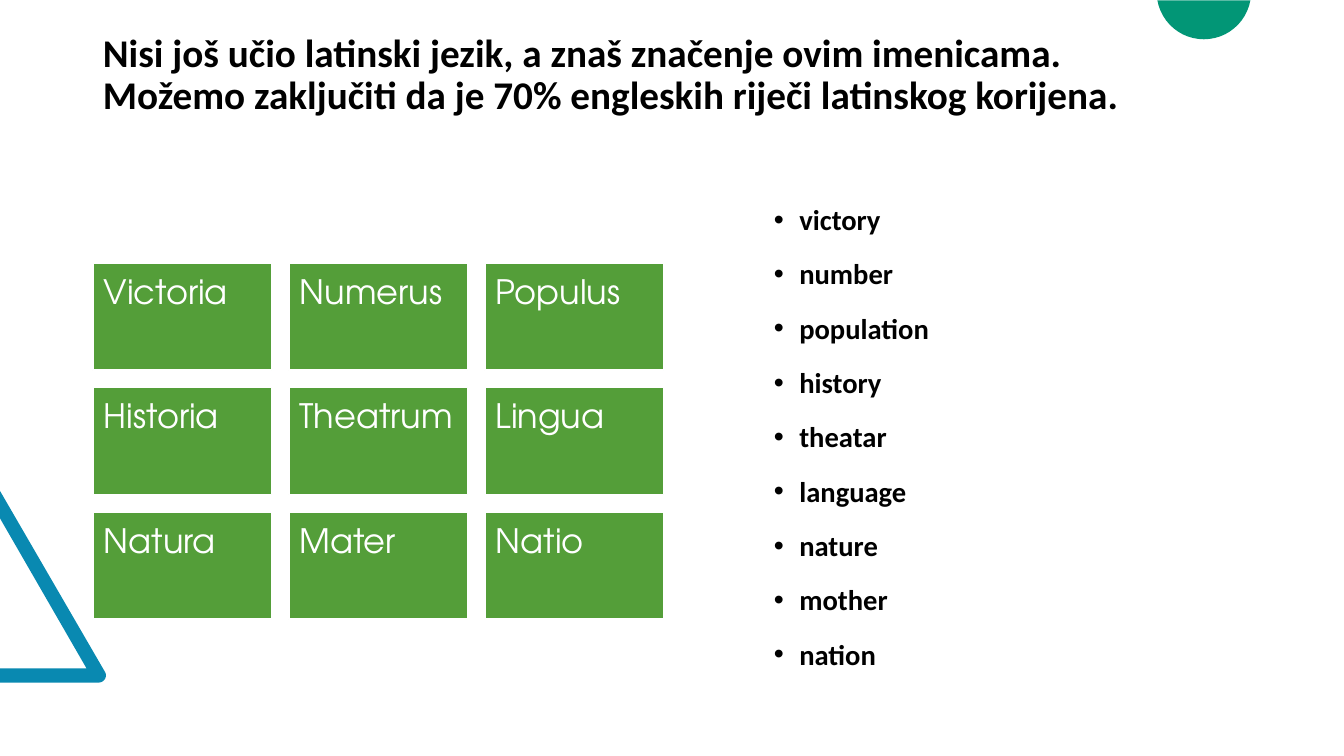
from math import cos, radians, sin

from lxml.etree import SubElement
from pptx import Presentation
from pptx.dml.color import RGBColor
from pptx.enum.shapes import MSO_SHAPE as Shape
from pptx.enum.text import MSO_ANCHOR as Anchor, MSO_AUTO_SIZE as AutoSize, PP_ALIGN as Align
from pptx.oxml.ns import qn
from pptx.util import Cm, Pt

BLACK = RGBColor(0x00, 0x00, 0x00)
WHITE = RGBColor(0xFF, 0xFF, 0xFF)
GREEN = RGBColor(0x54, 0x9E, 0x39)
TEAL = RGBColor(0x02, 0x96, 0x76)
BLUE = RGBColor(0x09, 0x89, 0xB1)

TITLE = ("Nisi još učio latinski jezik, a znaš značenje ovim imenicama.\v"
         "Možemo zaključiti da je 70% engleskih riječi latinskog korijena.")
LATIN = [["Victoria", "Numerus", "Populus"],
         ["Historia", "Theatrum", "Lingua"],
         ["Natura", "Mater", "Natio"]]
ENGLISH = ["victory", "number", "population", "history", "theatar",
           "language", "nature", "mother", "nation"]

TITLE_FONT = {"name": "Calibri", "size": Pt(28), "bold": True}
LIST_FONT = {"name": "Calibri", "size": Pt(20.4), "bold": True}
TILE_FONT = {"name": "TeX Gyre Adventor", "size": Pt(24), "bold": False}
TITLE_PARAGRAPH = {"alignment": Align.LEFT, "line_spacing": 0.9}
LIST_PARAGRAPH = {"alignment": Align.LEFT, "line_spacing": 0.87,
                  "space_before": Pt(0), "space_after": Pt(17.5)}
FRAME = {"word_wrap": True, "auto_size": AutoSize.NONE, "vertical_anchor": Anchor.TOP}


def set_attributes(target, values):
    for name, value in values.items():
        setattr(target, name, value)


def place(shape, left, top, width, height):
    set_attributes(shape, {"left": Cm(left), "top": Cm(top),
                           "width": Cm(width), "height": Cm(height)})


def format_text(text_frame, paragraph_format, font, color, **frame):
    set_attributes(text_frame, {**FRAME, **frame})
    for paragraph in text_frame.paragraphs:
        set_attributes(paragraph, paragraph_format)
        for run in paragraph.runs:
            set_attributes(run.font, font)
            run.font.color.rgb = color


def arc_points(center_x, center_y, radius, start, end, steps=24):
    angles = [radians(start + (end - start) * i / steps) for i in range(steps + 1)]
    return [(center_x + radius * cos(a), center_y + radius * sin(a)) for a in angles]


def add_outline(slide, points, color):
    points = [(Cm(x), Cm(y)) for x, y in points]
    builder = slide.shapes.build_freeform(*points[0])
    builder.add_line_segments(points[1:], close=True)
    shape = builder.convert_to_shape()
    shape.shadow.inherit = False
    shape.fill.solid()
    shape.fill.fore_color.rgb = color
    shape.line.fill.background()


def add_decoration(slide):
    # Open triangle with one rounded corner, cut by the left edge
    corner = arc_points(2.49, 17.02, 0.18, -30, 90)
    inner_edge = [(0, 17.2), (0, 16.84), (2.18, 16.84), (0, 13.06), (0, 12.37)]
    add_outline(slide, inner_edge + corner, BLUE)
    # Disc cut by the top edge
    add_outline(slide, arc_points(30.34, -0.2, 1.19, 10, 170), TEAL)


def fill_title(slide, *box):
    title = slide.shapes.title
    place(title, *box)
    title.text_frame.text = TITLE
    format_text(title.text_frame, TITLE_PARAGRAPH, TITLE_FONT, BLACK, margin_top=0)


def add_tiles(slide, left, top, width, height, gap=0.44):
    rows, columns = len(LATIN), len(LATIN[0])
    tile_width = (width - gap * (columns - 1)) / columns
    tile_height = (height - gap * (rows - 1)) / rows
    for row, words in enumerate(LATIN):
        for column, word in enumerate(words):
            tile = slide.shapes.add_shape(
                Shape.RECTANGLE,
                Cm(left + column * (tile_width + gap)), Cm(top + row * (tile_height + gap)),
                Cm(tile_width), Cm(tile_height))
            tile.shadow.inherit = False
            tile.fill.solid()
            tile.fill.fore_color.rgb = GREEN
            tile.line.color.rgb = WHITE
            tile.line.width = Pt(1)
            tile.text_frame.text = word
            format_text(tile.text_frame, TITLE_PARAGRAPH, TILE_FONT, WHITE,
                        margin_left=Cm(0.27), margin_right=0, margin_top=Cm(0.3))


def fill_list(slide, *box):
    body = slide.placeholders[1]
    place(body, *box)
    body.text_frame.text = "\n".join(ENGLISH)
    format_text(body.text_frame, LIST_PARAGRAPH, LIST_FONT, BLACK)
    # Hanging bullets
    for paragraph in body.text_frame.paragraphs:
        properties = paragraph._p.get_or_add_pPr()
        properties.set("marL", str(Cm(0.64)))
        properties.set("indent", str(Cm(-0.64)))
        SubElement(properties, qn("a:buFont")).set("typeface", "Arial")
        SubElement(properties, qn("a:buChar")).set("char", "•")


def main():
    presentation = Presentation()
    presentation.slide_width, presentation.slide_height = Cm(33.87), Cm(19.05)
    slide = presentation.slides.add_slide(presentation.slide_layouts[1])
    add_decoration(slide)
    fill_title(slide, 2.34, 0.84, 29.21, 3.68)
    add_tiles(slide, 2.34, 6.63, 14.38, 8.97)
    fill_list(slide, 19.25, 5.08, 12.27, 12.09)
    presentation.save("out.pptx")


if __name__ == "__main__":
    main()
